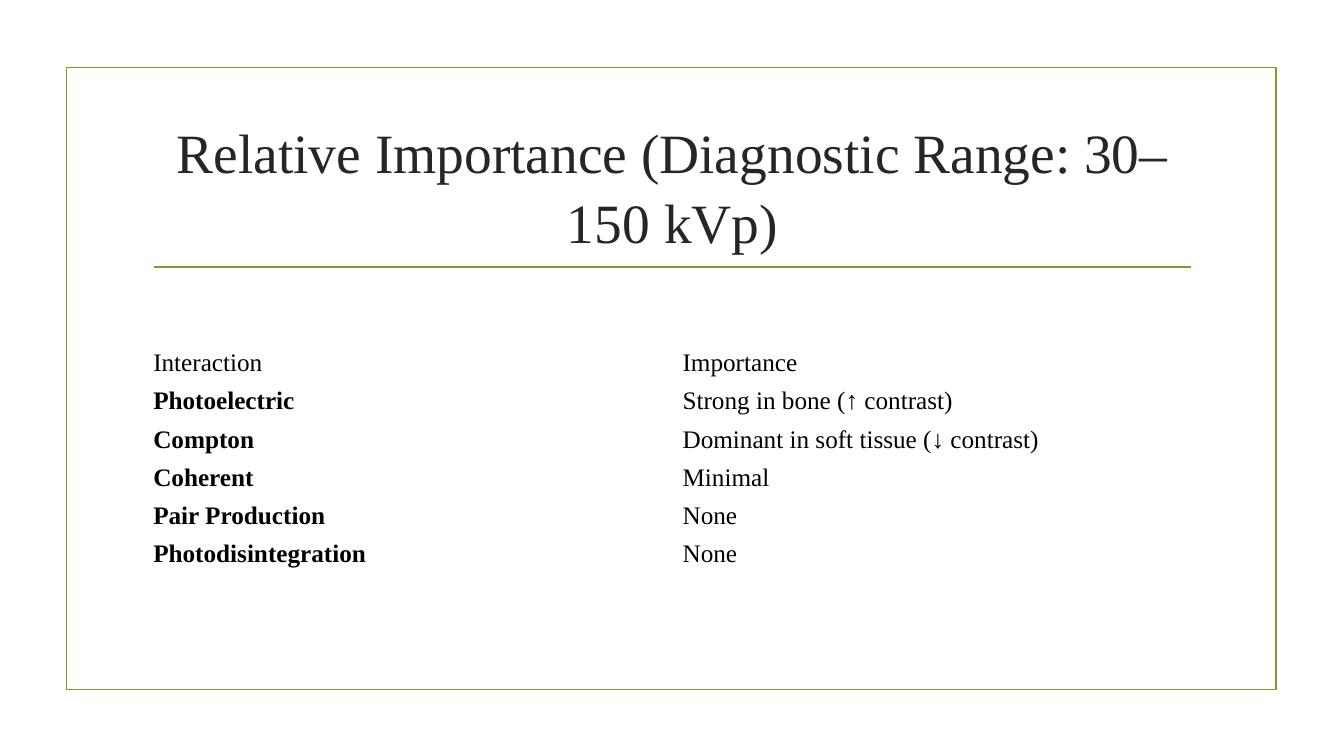
from typing import NamedTuple

from lxml.etree import SubElement
from pptx import Presentation
from pptx.dml.color import RGBColor
from pptx.enum.shapes import MSO_CONNECTOR, MSO_SHAPE
from pptx.enum.text import MSO_ANCHOR, PP_ALIGN
from pptx.oxml.ns import qn
from pptx.slide import Slide
from pptx.table import _Cell
from pptx.text.text import _Paragraph
from pptx.util import Inches, Pt

OLIVE = RGBColor(0x83, 0x99, 0x2A)
CHARCOAL = RGBColor(0x26, 0x26, 0x26)
BLACK = RGBColor(0x00, 0x00, 0x00)
FONT = "Times New Roman"
LINE_WIDTH = Pt(1.25)
CONTENT_LEFT = Inches(1.42)
CONTENT_WIDTH = Inches(10.5)
TABLE_HEIGHT = Inches(2.26)


class Row(NamedTuple):
    interaction: str
    importance: str
    bold: bool = True


ROWS = [
    Row("Interaction", "Importance", bold=False),
    Row("Photoelectric", "Strong in bone (↑ contrast)"),
    Row("Compton", "Dominant in soft tissue (↓ contrast)"),
    Row("Coherent", "Minimal"),
    Row("Pair Production", "None"),
    Row("Photodisintegration", "None"),
]


def style_paragraph(para: _Paragraph, size: float, color: RGBColor, bold: bool = False) -> None:
    para.font.name = FONT
    para.font.size = Pt(size)
    para.font.color.rgb = color
    para.font.bold = bold


def add_frame(page: Slide) -> None:
    # Border around the page
    frame = page.shapes.add_shape(
        MSO_SHAPE.RECTANGLE, Inches(0.66), Inches(0.67), Inches(12), Inches(6.17))
    frame.shadow.inherit = False
    frame.fill.background()
    frame.line.color.rgb = OLIVE
    frame.line.width = LINE_WIDTH

    # Rule below the title
    rule = page.shapes.add_connector(
        MSO_CONNECTOR.STRAIGHT, Inches(1.53), Inches(2.65), Inches(11.81), Inches(2.65))
    rule.line.color.rgb = OLIVE
    rule.line.width = LINE_WIDTH
    SubElement(rule._element.spPr, qn("a:effectLst"))


def add_title(page: Slide, text: str) -> None:
    box = page.shapes.add_textbox(CONTENT_LEFT, Inches(1.07), CONTENT_WIDTH, Inches(1.43))
    frame = box.text_frame
    frame.word_wrap = True
    frame.vertical_anchor = MSO_ANCHOR.MIDDLE
    frame.margin_top = Inches(0.1)
    frame.margin_bottom = 0
    para = frame.paragraphs[0]
    para.text = text
    para.alignment = PP_ALIGN.CENTER
    para.line_spacing = 1.04
    style_paragraph(para, 39.6, CHARCOAL)


def fill_cell(cell: _Cell, text: str, bold: bool) -> None:
    cell.fill.background()
    cell.vertical_anchor = MSO_ANCHOR.MIDDLE
    cell.margin_top = cell.margin_bottom = Inches(0.04)
    para = cell.text_frame.paragraphs[0]
    para.text = text
    style_paragraph(para, 18, BLACK, bold)


def add_importance_table(page: Slide, rows: list[Row]) -> None:
    table = page.shapes.add_table(
        len(rows), 2, CONTENT_LEFT, Inches(3.41), CONTENT_WIDTH, TABLE_HEIGHT).table
    table.first_row = False
    table.horz_banding = False
    # The plain style without grid lines
    style = table._tbl.tblPr.find(qn("a:tableStyleId"))
    style.text = "{2D5ABB26-0587-4C30-8999-92F81FD0307C}"
    for index, row in enumerate(rows):
        fill_cell(table.cell(index, 0), row.interaction, row.bold)
        fill_cell(table.cell(index, 1), row.importance, False)


def main() -> None:
    deck = Presentation()
    deck.slide_width = Inches(13.33)
    deck.slide_height = Inches(7.5)
    page = deck.slides.add_slide(deck.slide_layouts[6])
    add_frame(page)
    add_title(page, "Relative Importance (Diagnostic Range: 30–150 kVp)")
    add_importance_table(page, ROWS)
    deck.save("out.pptx")


if __name__ == "__main__":
    main()
